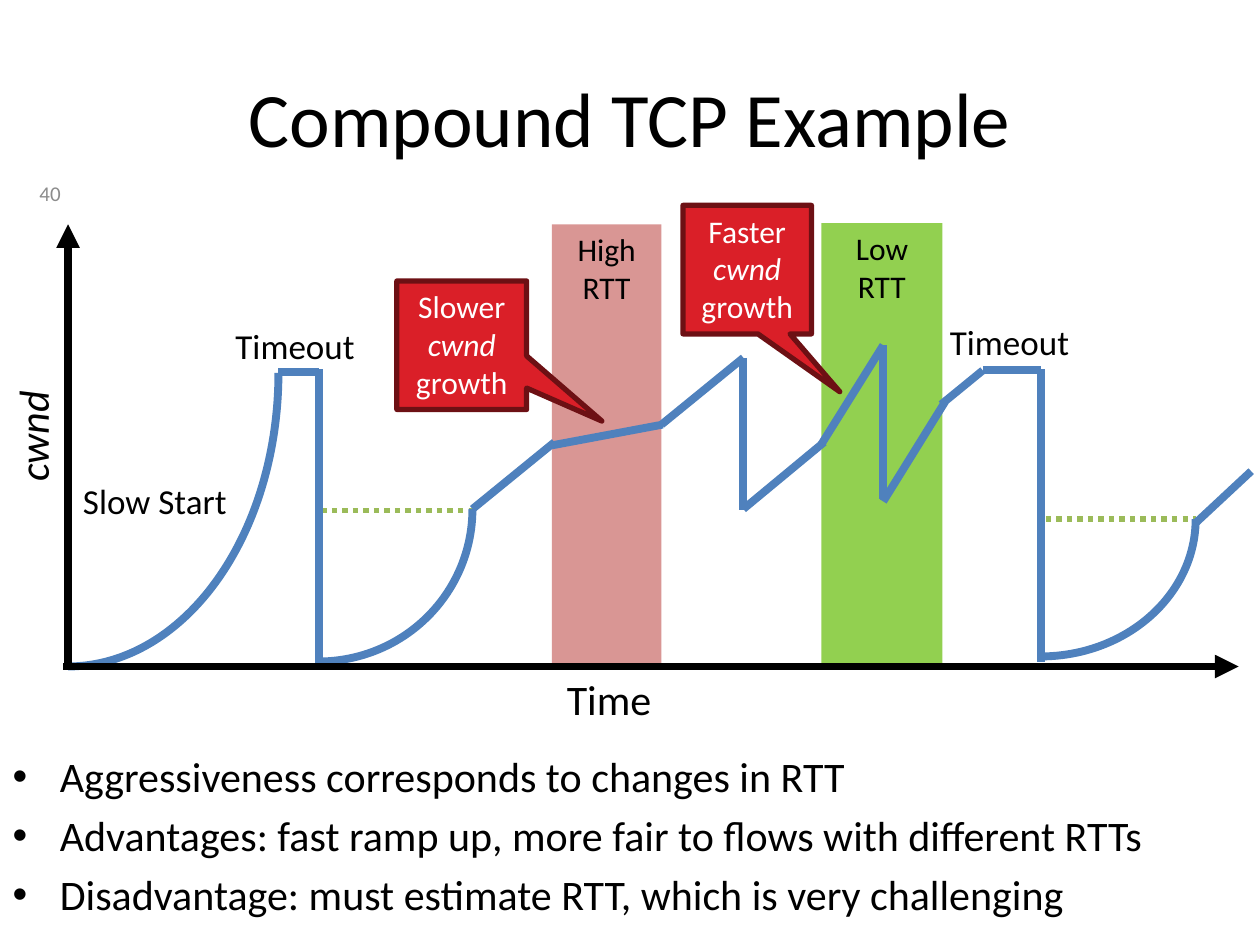
from dataclasses import dataclass

from lxml.etree import SubElement
from pptx import Presentation
from pptx.dml.color import RGBColor
from pptx.enum.dml import MSO_LINE
from pptx.enum.shapes import MSO_CONNECTOR, MSO_SHAPE
from pptx.enum.text import MSO_ANCHOR, PP_ALIGN
from pptx.oxml.ns import qn
from pptx.util import Inches, Pt


@dataclass(frozen=True)
class Theme:
    font: str = "Calibri"
    ink: str = "000000"
    inverse: str = "FFFFFF"
    muted: str = "8C8C8C"
    curve: str = "4F81BD"
    threshold: str = "9BBB59"
    high_rtt: str = "D99694"
    low_rtt: str = "92D050"
    callout: str = "DA1F28"
    callout_edge: str = "6D1014"
    title_size: int = 44
    body_size: int = 24
    label_size: int = 20
    note_size: int = 18
    number_size: int = 12
    thick: float = 4.5
    thin: float = 3


THEME = Theme()
LEFT_SIDE = 1


def rgb(color):
    return RGBColor.from_string(color)


def style_paragraph(paragraph, size, color=THEME.ink, align=None, italic=None):
    font = paragraph.font
    font.name, font.size, font.italic = THEME.font, Pt(size), italic
    font.color.rgb = rgb(color)
    if align is not None:
        paragraph.alignment = align


def place(shape, left, top, width, height):
    shape.left, shape.top = Inches(left), Inches(top)
    shape.width, shape.height = Inches(width), Inches(height)


def fill_placeholder(placeholder, box, lines, size, align=None):
    place(placeholder, *box)
    frame = placeholder.text_frame
    frame.text = "\n".join(lines)
    for paragraph in frame.paragraphs:
        style_paragraph(paragraph, size, align=align)


def add_label(slide, box, text, size, color=THEME.ink, align=PP_ALIGN.LEFT,
              italic=None, rotation=0):
    label = slide.shapes.add_textbox(*map(Inches, box))
    label.rotation = rotation
    frame = label.text_frame
    frame.word_wrap = False
    frame.vertical_anchor = MSO_ANCHOR.MIDDLE
    frame.text = text
    style_paragraph(frame.paragraphs[0], size, color, align, italic)


def add_block(slide, kind, box, color):
    block = slide.shapes.add_shape(kind, *map(Inches, box))
    block.shadow.inherit = False
    block.fill.solid()
    block.fill.fore_color.rgb = rgb(color)
    block.text_frame.word_wrap = True
    block.text_frame.vertical_anchor = MSO_ANCHOR.TOP
    return block


def add_band(slide, box, level, color):
    band = add_block(slide, MSO_SHAPE.RECTANGLE, box, color)
    band.line.fill.background()
    band.text_frame.text = f"{level}\nRTT"
    for paragraph in band.text_frame.paragraphs:
        style_paragraph(paragraph, THEME.note_size, align=PP_ALIGN.CENTER)
    return band


def add_callout(slide, box, pointer, speed):
    callout = add_block(slide, MSO_SHAPE.RECTANGULAR_CALLOUT, box, THEME.callout)
    callout.adjustments[0], callout.adjustments[1] = pointer
    callout.line.color.rgb = rgb(THEME.callout_edge)
    callout.line.width = Pt(THEME.thin)
    paragraph = callout.text_frame.paragraphs[0]
    style_paragraph(paragraph, THEME.note_size, THEME.inverse, PP_ALIGN.CENTER)
    for text in (f"{speed} ", "cwnd", " growth"):
        run = paragraph.add_run()
        run.text = text
        run.font.italic = text == "cwnd"


def add_line(slide, start, end, color=THEME.curve, width=THEME.thick,
             dash=None, arrow=False):
    line = slide.shapes.add_connector(MSO_CONNECTOR.STRAIGHT,
                                      *map(Inches, (*start, *end)))
    line.line.color.rgb = rgb(color)
    line.line.width = Pt(width)
    if dash is not None:
        line.line.dash_style = dash
    if arrow:
        SubElement(line.line._get_or_add_ln(), qn("a:tailEnd"), type="triangle")
    SubElement(line._element.spPr, qn("a:effectLst"))
    return line


def add_slow_start(slide, left, top, width, height):
    """Draw the lower right quarter of an ellipse centred on (left, top)."""
    box = (left - width, top - height, 2 * width, 2 * height)
    arc = slide.shapes.add_shape(MSO_SHAPE.ARC, *map(Inches, box))
    # Angles count 1/60000 degree, scaled by 100000: 0 to 90 degrees
    arc.adjustments[0], arc.adjustments[1] = 0, 54
    arc.shadow.inherit = False
    arc.fill.background()
    arc.line.color.rgb = rgb(THEME.curve)
    arc.line.width = Pt(THEME.thick)


def add_window_curve(slide, high_band, low_band):
    # Slow start phases
    for quarter in ((0.54, 2.96, 1.67, 2.33), (2.53, 4.04, 1.22, 1.21),
                    (8.26, 4.12, 1.23, 1.09)):
        add_slow_start(slide, *quarter)

    # Linear growth, plateaus and drops
    for start, end in (
        ((2.21, 2.95), (2.53, 2.95)), ((2.53, 2.93), (2.53, 5.26)),
        ((3.75, 4.04), (4.4, 3.51)), ((5.25, 3.37), (5.9, 2.84)),
        ((5.9, 2.84), (5.9, 4.05)), ((5.9, 4.04), (6.54, 3.51)),
        ((7.01, 2.74), (7.01, 3.96)), ((7.01, 3.98), (7.5, 3.19)),
        ((7.47, 3.21), (7.8, 2.94)), ((7.8, 2.94), (8.26, 2.94)),
        ((8.26, 2.93), (8.26, 5.25)), ((9.49, 4.15), (9.93, 3.74)),
    ):
        add_line(slide, start, end)

    # Growth that starts at the edge of an RTT band
    for band, start, end in ((high_band, (4.38, 3.53), (5.26, 3.37)),
                             (low_band, (6.52, 3.53), (7.01, 2.74))):
        add_line(slide, start, end).begin_connect(band, LEFT_SIDE)


def main():
    prs = Presentation()
    prs.slide_width, prs.slide_height = Inches(10), Inches(7.5)
    slide = prs.slides.add_slide(prs.slide_layouts[1])

    # Title, takeaways and slide number
    fill_placeholder(slide.shapes.title, (0.5, 0.3, 9, 1.25),
                     ["Compound TCP Example"], THEME.title_size, PP_ALIGN.CENTER)
    fill_placeholder(slide.placeholders[1], (0, 5.91, 10, 1.59), [
        "Aggressiveness corresponds to changes in RTT",
        "Advantages: fast ramp up, more fair to flows with different RTTs",
        "Disadvantage: must estimate RTT, which is very challenging",
    ], THEME.body_size)
    add_label(slide, (0, 1.37, 0.58, 0.33), "40", THEME.number_size,
              THEME.muted, PP_ALIGN.RIGHT)

    # RTT bands
    low_band = add_band(slide, (6.52, 1.77, 0.96, 3.51), "Low", THEME.low_rtt)
    high_band = add_band(slide, (4.38, 1.78, 0.87, 3.51), "High", THEME.high_rtt)

    # Slow start thresholds
    for left, right, level in ((2.55, 3.76, 4.05), (8.3, 9.49, 4.12)):
        add_line(slide, (left, level), (right, level), THEME.threshold,
                 THEME.thin, MSO_LINE.ROUND_DOT)

    add_window_curve(slide, high_band, low_band)

    # Axes
    for start, end in (((0.54, 5.29), (0.54, 1.78)), ((0.5, 5.29), (9.83, 5.29))):
        add_line(slide, start, end, THEME.ink, arrow=True)
    add_label(slide, (4.4, 5.29, 0.94, 0.51), "Time", THEME.body_size)
    add_label(slide, (-0.24, 3.17, 0.99, 0.51), "cwnd", THEME.body_size,
              italic=True, rotation=270)

    # Phase labels
    for box, text in (((1.77, 2.52, 1.21, 0.44), "Timeout"),
                      ((0.56, 3.75, 1.48, 0.44), "Slow Start"),
                      ((7.44, 2.49, 1.21, 0.44), "Timeout")):
        add_label(slide, box, text, THEME.label_size)

    # Growth callouts
    add_callout(slide, (3.15, 2.23, 1.03, 1.02), (1.08, 0.59), "Slower")
    add_callout(slide, (5.42, 1.63, 1.02, 1.02), (0.72, 0.95), "Faster")

    prs.save("out.pptx")


if __name__ == "__main__":
    main()
